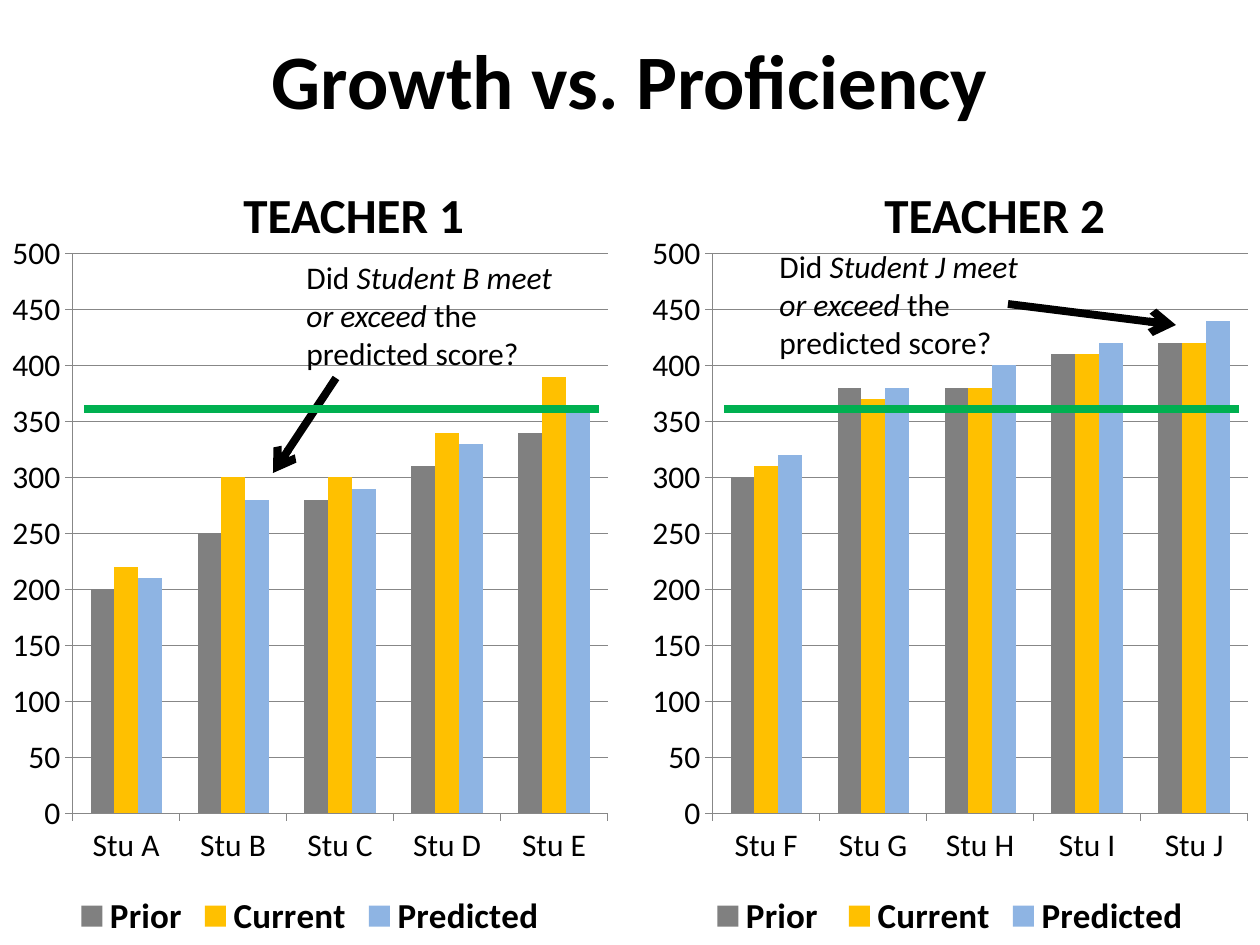
from lxml.etree import SubElement
from pptx import Presentation
from pptx.chart.data import CategoryChartData
from pptx.dml.color import RGBColor
from pptx.enum.chart import XL_CHART_TYPE, XL_LEGEND_POSITION, XL_TICK_MARK
from pptx.enum.shapes import MSO_CONNECTOR
from pptx.enum.text import MSO_ANCHOR, PP_ALIGN
from pptx.oxml.ns import qn
from pptx.util import Pt

PX = 7257.14  # EMU in one pixel, 126 pixels to the inch
BLACK, GREEN, AXIS_GREY = "000000", "00B050", "878787"
SERIES_COLORS = ["808080", "FFC000", "8EB4E3"]


def px(*lengths):
    return [round(length * PX) for length in lengths]


def set_format(target, color, **values):
    """Colour a font or a line and set its other values."""
    target_color = target.color
    target_color.rgb = RGBColor.from_string(color)
    for name, value in values.items():
        setattr(target, name, value)


presentation = Presentation()
presentation.slide_width, presentation.slide_height = px(1260, 945)
slide = presentation.slides.add_slide(presentation.slide_layouts[5])

title = slide.shapes.title
title.left, title.top, title.width, title.height = px(63, 0, 1134, 158)
title.text_frame.vertical_anchor = MSO_ANCHOR.MIDDLE
paragraph = title.text_frame.paragraphs[0]
paragraph.alignment = PP_ALIGN.CENTER
run = paragraph.add_run()
run.text = "Growth vs. Proficiency"
set_format(run.font, BLACK, name="Calibri", size=Pt(44), bold=True)

teachers = [
    {
        "heading": "TEACHER 1", "chart_left": 0, "heading_left": 231,
        "students": "ABCDE",
        "scores": {
            "Prior": [200, 250, 280, 310, 340],
            "Current": [220, 300, 300, 340, 390],
            "Predicted": [210, 280, 290, 330, 360],
        },
        "proficiency": (84, 409, 599, 409),
        "arrow": (336, 378, 273, 473),
        "question": (294, 252), "asked": "Student B",
    },
    {
        "heading": "TEACHER 2", "chart_left": 640, "heading_left": 872,
        "students": "FGHIJ",
        "scores": {
            "Prior ": [300, 380, 380, 410, 420],
            "Current": [310, 370, 380, 410, 420],
            "Predicted": [320, 380, 400, 420, 440],
        },
        "proficiency": (724, 409, 1239, 409),
        "arrow": (1008, 304, 1176, 325),
        "question": (767, 241), "asked": "Student J",
    },
]

for teacher in teachers:
    chart_data = CategoryChartData()
    chart_data.categories = [f"Stu {letter}" for letter in teacher["students"]]
    for name, values in teacher["scores"].items():
        chart_data.add_series(name, values)
    chart = slide.shapes.add_chart(
        XL_CHART_TYPE.COLUMN_CLUSTERED,
        *px(teacher["chart_left"], 220, 620, 725), chart_data).chart
    chart.has_title = False
    set_format(chart.font, BLACK, name="Calibri", size=Pt(18))

    plot = chart.plots[0]
    plot.gap_width, plot.overlap, plot.vary_by_categories = 150, 0, False
    for series, color in zip(plot.series, SERIES_COLORS):
        series.format.fill.solid()
        series.format.fill.fore_color.rgb = RGBColor.from_string(color)

    scores = chart.value_axis
    scores.minimum_scale, scores.maximum_scale, scores.major_unit = 0, 500, 50
    scores.has_major_gridlines = True
    set_format(scores.major_gridlines.format.line, AXIS_GREY, width=Pt(0.75))
    for axis in (chart.category_axis, scores):
        axis.major_tick_mark = XL_TICK_MARK.OUTSIDE
        set_format(axis.format.line, AXIS_GREY, width=Pt(0.75))

    chart.has_legend = True
    chart.legend.position = XL_LEGEND_POSITION.BOTTOM
    chart.legend.include_in_layout = False
    set_format(chart.legend.font, BLACK, name="Calibri", size=Pt(20), bold=True)

    heading = slide.shapes.add_textbox(*px(teacher["heading_left"], 178, 248, 72))
    heading.text_frame.word_wrap = False
    run = heading.text_frame.paragraphs[0].add_run()
    run.text = teacher["heading"]
    set_format(run.font, BLACK, name="Calibri", size=Pt(28), bold=True)

for part, color in (("arrow", BLACK), ("proficiency", GREEN)):
    for teacher in teachers:
        connector = slide.shapes.add_connector(
            MSO_CONNECTOR.STRAIGHT, *px(*teacher[part]))
        set_format(connector.line, color, width=Pt(4.5))
        if part == "arrow":
            SubElement(connector.line._get_or_add_ln(), qn("a:tailEnd"), type="arrow")
        SubElement(connector._element.spPr, qn("a:effectLst"))

for teacher in teachers:
    question = slide.shapes.add_textbox(*px(*teacher["question"], 294, 127))
    question.text_frame.word_wrap = True
    paragraph = question.text_frame.paragraphs[0]
    for text, italic in (("Did ", False),
                         (f"{teacher['asked']} meet or exceed ", True),
                         ("the predicted score?", False)):
        run = paragraph.add_run()
        run.text = text
        set_format(run.font, BLACK, name="Calibri", size=Pt(18), italic=italic)

presentation.save("out.pptx")
